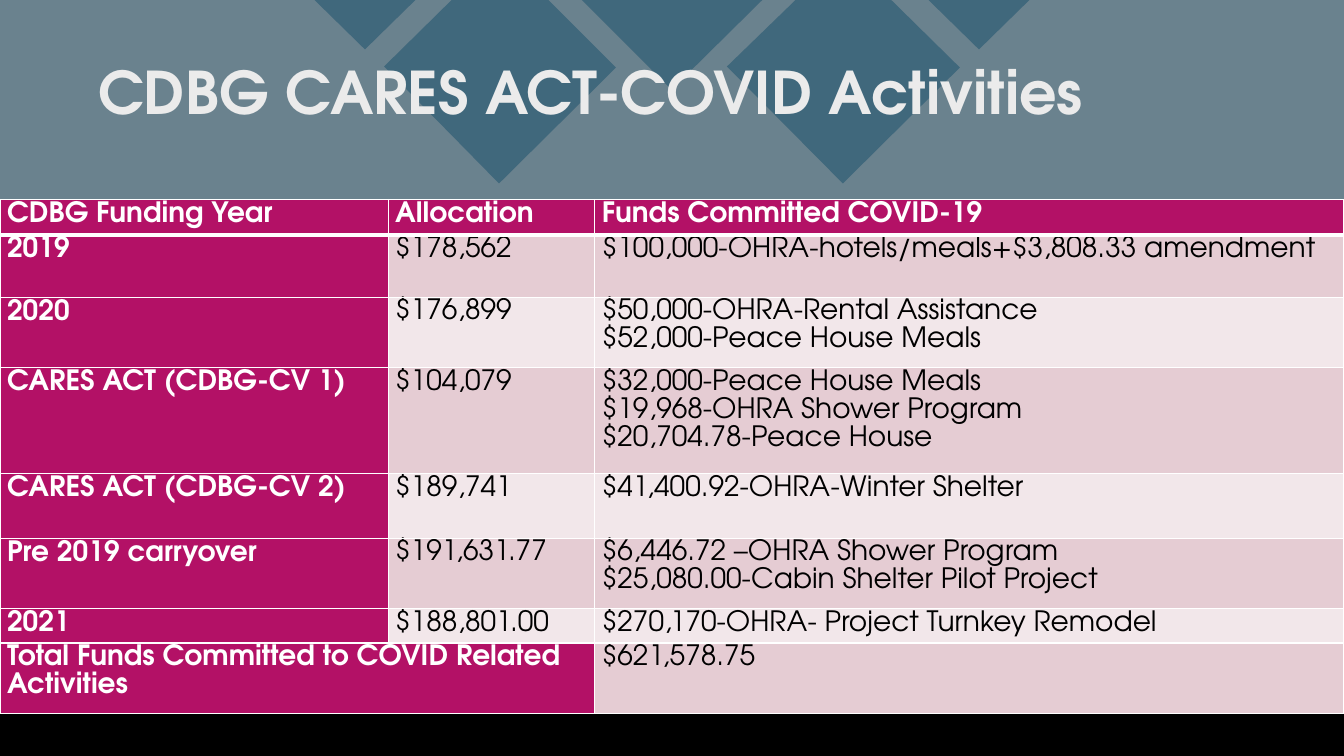
from lxml import etree
from pptx import Presentation
from pptx import util as u
from pptx.dml.color import RGBColor
from pptx.enum import shapes, text
from pptx.oxml import ns

PX = 9144
FONT = "TeX Gyre Adventor"
MAGENTA, WHITE, BLACK = "B31166", "FFFFFF", "000000"
BANDS = ["E5CCD3", "F2E7EA"]

DIAMONDS = [
    [(577, 0), (756, 0), (666, 89)],
    [(448, 0), (544, 0), (611, 67), (495, 182), (381, 66)],
    [(789, 0), (884, 0), (952, 67), (836, 182), (721, 66)],
    [(921, 0), (1021, 0), (971, 49)],
    [(312, 0), (412, 0), (362, 49)],
]
COLUMNS = [385, 205, 743]
HEIGHTS = [35, 62, 70, 105, 64, 70, 34, 70]
FUNDING = [
    ["CDBG Funding Year", "Allocation", "Funds Committed COVID-19"],
    ["2019", "$178,562", "$100,000-OHRA-hotels/meals+$3,808.33 amendment"],
    ["2020", "$176,899", "$50,000-OHRA-Rental Assistance\n$52,000-Peace House Meals"],
    ["CARES ACT (CDBG-CV 1)", "$104,079",
     "$32,000-Peace House Meals\n$19,968-OHRA Shower Program\n$20,704.78-Peace House"],
    ["CARES ACT (CDBG-CV 2)", "$189,741", "$41,400.92-OHRA-Winter Shelter"],
    ["Pre 2019 carryover", "$191,631.77",
     "$6,446.72 –OHRA Shower Program\n$25,080.00-Cabin Shelter Pilot Project"],
    ["2021", "$188,801.00", "$270,170-OHRA- Project Turnkey Remodel"],
    ["Total Funds Committed to COVID Related Activities", "", "$621,578.75"],
]


def px(n):
    return u.Emu(n * PX)


def rgb(color):
    return RGBColor.from_string(color)


def write(tf, content, size=20, color=BLACK, bold=False, align=text.PP_ALIGN.LEFT, spacing=None):
    tf.word_wrap = True
    for i, line in enumerate(content.split("\n")):
        p = tf.add_paragraph() if i else tf.paragraphs[0]
        p.alignment = align
        if spacing:
            p.line_spacing = u.Pt(spacing)
        r = p.add_run()
        r.text = line
        r.font.name = FONT
        r.font.size = u.Pt(size)
        r.font.bold = bold
        r.font.color.rgb = rgb(color)


def border(cell, side, width):
    pr = cell._tc.get_or_add_tcPr()
    ln = etree.SubElement(pr, ns.qn("a:ln" + side), w=str(u.Pt(width)))
    fill = etree.SubElement(ln, ns.qn("a:solidFill"))
    etree.SubElement(fill, ns.qn("a:srgbClr"), val=WHITE)


class Deck:
    def __init__(self, width, height):
        self.prs = Presentation()
        self.prs.slide_width, self.prs.slide_height = px(width), px(height)
        self.s = None

    def slide(self, color):
        self.s = self.prs.slides.add_slide(self.prs.slide_layouts[6])
        self.s.background.fill.solid()
        self.s.background.fill.fore_color.rgb = rgb(color)

    def paint(self, sp, color):
        sp.shadow.inherit = False
        sp.fill.solid()
        sp.fill.fore_color.rgb = rgb(color)
        sp.line.fill.background()

    def rect(self, x, y, w, h, color):
        sp = self.s.shapes.add_shape(shapes.MSO_SHAPE.RECTANGLE, px(x), px(y), px(w), px(h))
        self.paint(sp, color)

    def polygon(self, points, color):
        fb = self.s.shapes.build_freeform(*points[0], scale=PX)
        fb.add_line_segments(points[1:], close=True)
        self.paint(fb.convert_to_shape(), color)

    def label(self, x, y, w, h, content, **fmt):
        sp = self.s.shapes.add_textbox(px(x), px(y), px(w), px(h))
        write(sp.text_frame, content, **fmt)

    def table(self, x, y, columns, heights, rows):
        frame = self.s.shapes.add_table(
            len(rows), len(columns), px(x), px(y), px(sum(columns)), px(sum(heights)))
        table = frame.table
        table.horz_banding = False
        for column, width in zip(table.columns, columns):
            column.width = px(width)
        for i, row in enumerate(rows):
            table.rows[i].height = px(heights[i])
            for j, content in enumerate(row):
                self.cell(table.cell(i, j), i, j, content)
        return table

    def cell(self, cell, i, j, content):
        heading = i == 0 or j == 0
        cell.margin_left = cell.margin_right = px(7)
        cell.margin_top = cell.margin_bottom = 0
        for side in "LRTB":
            border(cell, side, 3 if (i, side) in [(0, "B"), (1, "T")] else 1)
        cell.fill.solid()
        cell.fill.fore_color.rgb = rgb(MAGENTA if heading else BANDS[(i - 1) % 2])
        if content:
            write(cell.text_frame, content, color=WHITE if heading else BLACK,
                  bold=heading, spacing=20)


def main():
    deck = Deck(1333, 750)
    deck.slide(BLACK)
    deck.rect(0, 0, 1333, 200, "6A828E")
    for points in DIAMONDS:
        deck.polygon(points, "40687C")
    deck.label(71, 50, 1029, 153, "CDBG CARES ACT-COVID Activities",
               size=42, color="EBEBEB", bold=True, align=text.PP_ALIGN.CENTER)
    table = deck.table(0, 198, COLUMNS, HEIGHTS, FUNDING)
    table.cell(7, 0).merge(table.cell(7, 1))
    deck.prs.save("out.pptx")


if __name__ == "__main__":
    main()
